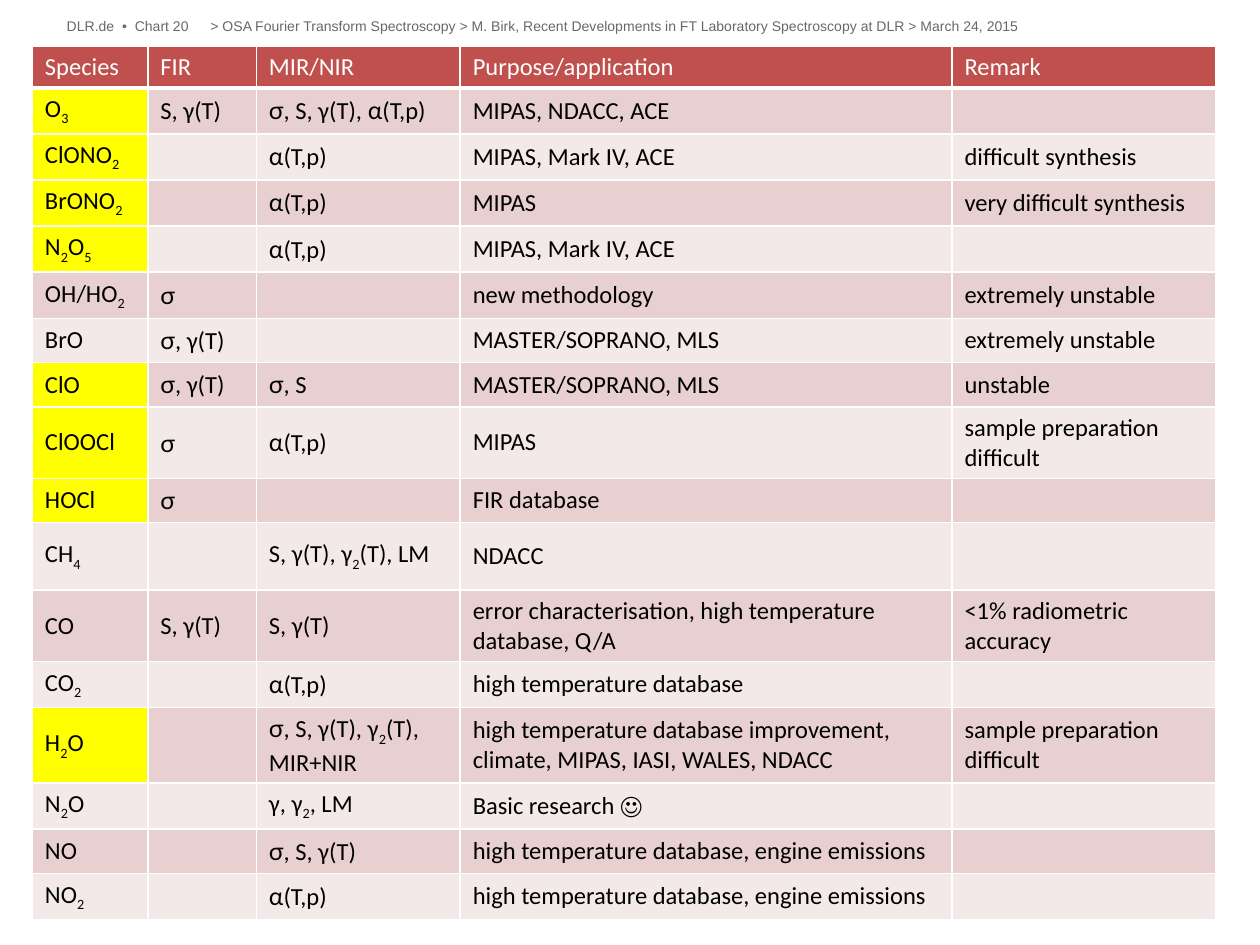
"""Build the slide of molecular species with their spectral ranges, uses and remarks."""
import itertools
import lxml.etree
import pptx
import pptx.dml.color
import pptx.enum.text
import pptx.oxml.ns
import pptx.util

Pt = pptx.util.Pt
qn = pptx.oxml.ns.qn

HUES = {"head": "C0504D", "odd": "E8D0D0", "even": "F4E9E9", "mark": "FFFF00",
        "white": "FFFFFF", "black": "000000", "grey": "686868"}

NOTES = [
    ("> OSA Fourier Transform Spectroscopy > M. Birk, Recent Developments in FT "
     "Laboratory Spectroscopy at DLR > March 24, 2015", 120.24, 561.6),
    ("DLR.de  •  Chart 20", 38.16, 82.08),
]

ROWS = [
    ("Species", "FIR", "MIR/NIR", "Purpose/application", "Remark"),
    ("O3", "S, γ(T)", "σ, S, γ(T), α(T,p)", "MIPAS, NDACC, ACE", ""),
    ("ClONO2", "", "α(T,p)", "MIPAS, Mark IV, ACE", "difficult synthesis"),
    ("BrONO2", "", "α(T,p)", "MIPAS", "very difficult synthesis"),
    ("N2O5", "", "α(T,p)", "MIPAS, Mark IV, ACE", ""),
    ("OH/HO2", "σ", "", "new methodology", "extremely unstable"),
    ("BrO", "σ, γ(T)", "", "MASTER/SOPRANO, MLS", "extremely unstable"),
    ("ClO", "σ, γ(T)", "σ, S", "MASTER/SOPRANO, MLS", "unstable"),
    ("ClOOCl", "σ", "α(T,p)", "MIPAS", "sample preparation difficult"),
    ("HOCl", "σ", "", "FIR database", ""),
    ("CH4", "", "S, γ(T), γ2(T), LM", "NDACC", ""),
    ("CO", "S, γ(T)", "S, γ(T)",
     "error characterisation, high temperature database, Q/A", "<1% radiometric accuracy"),
    ("CO2", "", "α(T,p)", "high temperature database", ""),
    ("H2O", "", "σ, S, γ(T), γ2(T), MIR+NIR",
     "high temperature database improvement, climate, MIPAS, IASI, WALES, NDACC",
     "sample preparation difficult"),
    ("N2O", "", "γ, γ2, LM", "Basic research ☺", ""),
    ("NO", "", "σ, S, γ(T)", "high temperature database, engine emissions", ""),
    ("NO2", "", "α(T,p)", "high temperature database, engine emissions", ""),
]
MARKED = {"O3", "ClONO2", "BrONO2", "N2O5", "ClO", "ClOOCl", "HOCl", "H2O"}
WIDTHS = [66, 62, 116.5, 281, 150.5]
LOW, MID, HIGH = 23, 25.3, 38.5
TALL = {"ClOOCl", "CH4", "CO", "H2O"}
SHORT = {"Species", "NO2"}


def color(name):
    return pptx.dml.color.RGBColor.from_string(HUES[name])


def style(run, face, size, hue):
    run.font.name = face
    run.font.size = Pt(size)
    run.font.bold = False
    run.font.color.rgb = color(hue)


def kind(char):
    return "sub" if char.isdigit() else "greek" if char in "σα" else "plain"


def write(cell, text, formula, hue):
    para = cell.text_frame.paragraphs[0]
    parts = itertools.groupby(text, kind) if formula else [("plain", text)] if text else []
    for sort, chars in parts:
        run = para.add_run()
        run.text = "".join(chars)
        style(run, "Lato" if sort == "greek" else "Calibri", 14, hue)
        if sort == "sub":
            run.font._element.set("baseline", "-25000")
    if not text:
        lxml.etree.SubElement(para._p, qn("a:endParaRPr"), sz="1400")


def frame(cell, base):
    props = cell._tc.get_or_add_tcPr()
    for spot, side in enumerate("LRTB"):
        line = lxml.etree.Element(qn("a:ln" + side), w=str(Pt(base if side == "B" else 1)))
        fill = lxml.etree.SubElement(line, qn("a:solidFill"))
        lxml.etree.SubElement(fill, qn("a:srgbClr"), val=HUES["white"])
        props.insert(spot, line)


def add_note(slide, text, left, width):
    box = slide.shapes.add_textbox(Pt(left), Pt(10.08), Pt(width), Pt(11.52)).text_frame
    box.margin_left = box.margin_right = box.margin_top = box.margin_bottom = 0
    box.word_wrap = True
    box.text = text
    style(box.paragraphs[0].runs[0], "Arial", 8, "grey")


def add_grid(slide):
    tall = [HIGH if row[0] in TALL else LOW if row[0] in SHORT else MID for row in ROWS]
    grid = slide.shapes.add_table(len(ROWS), len(WIDTHS), Pt(18.5), Pt(26.2),
                                  Pt(sum(WIDTHS)), Pt(sum(tall))).table
    grid.first_row = grid.horz_banding = False
    for col, width in zip(grid.columns, WIDTHS):
        col.width = Pt(width)
    for y, row in enumerate(ROWS):
        grid.rows[y].height = Pt(tall[y])
        band = "head" if y == 0 else "odd" if y % 2 else "even"
        for x, text in enumerate(row):
            cell = grid.cell(y, x)
            cell.vertical_anchor = pptx.enum.text.MSO_ANCHOR.MIDDLE
            cell.fill.solid()
            marked = x == 0 and text in MARKED
            cell.fill.fore_color.rgb = color("mark" if marked else band)
            frame(cell, 1 if y else 3)
            write(cell, text, x < 3, "black" if y else "white")


def main():
    deck = pptx.Presentation()
    deck.slide_width, deck.slide_height = Pt(720), Pt(540)
    slide = deck.slides.add_slide(deck.slide_layouts[6])
    for note in NOTES:
        add_note(slide, *note)
    add_grid(slide)
    deck.save("out.pptx")


if __name__ == "__main__":
    main()
